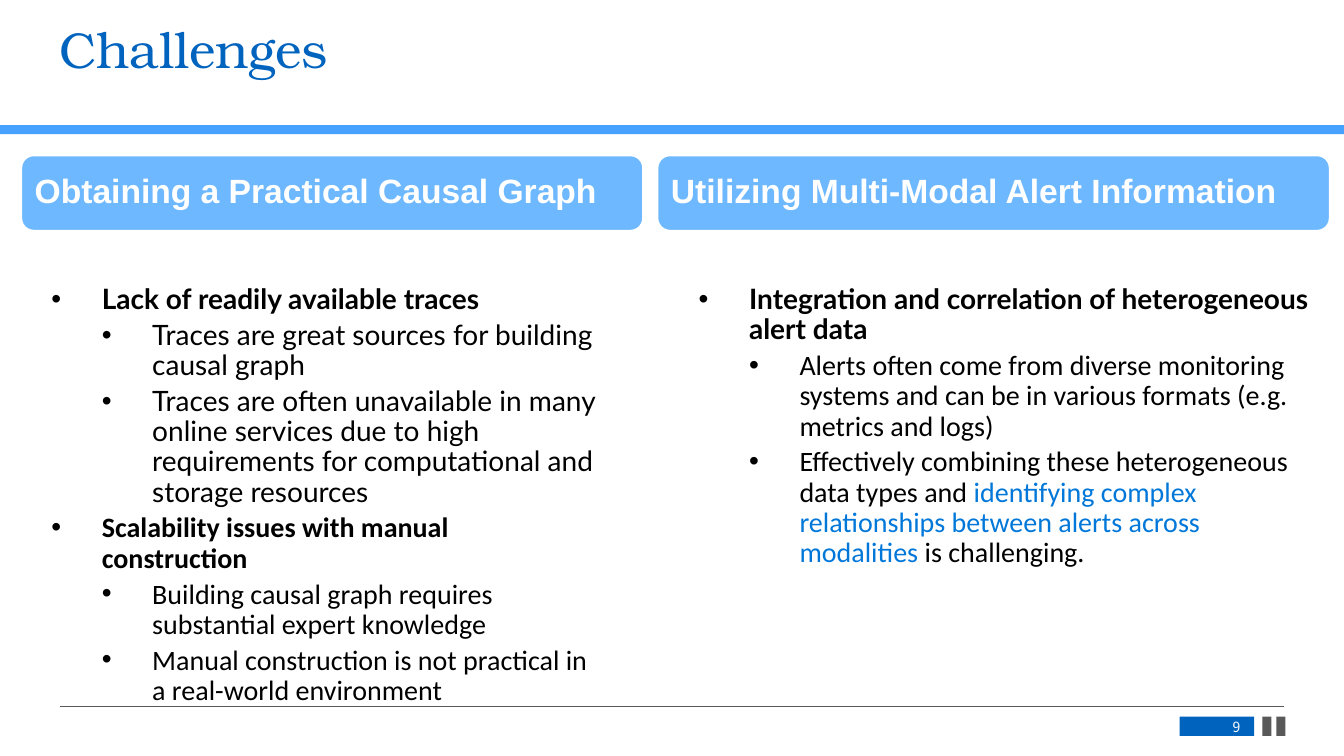
"""Build the Challenges slide: two headed columns of nested bullets."""
from dataclasses import dataclass

from lxml import etree
from pptx import Presentation
from pptx.dml.color import RGBColor
from pptx.enum.shapes import MSO_CONNECTOR, MSO_SHAPE
from pptx.enum.text import MSO_ANCHOR, PP_ALIGN
from pptx.oxml.ns import qn
from pptx.util import Emu, Pt

RECT = MSO_SHAPE.RECTANGLE
ROUNDED = MSO_SHAPE.ROUNDED_RECTANGLE
STRAIGHT = MSO_CONNECTOR.STRAIGHT
MIDDLE = MSO_ANCHOR.MIDDLE
TOP = MSO_ANCHOR.TOP
RIGHT = PP_ALIGN.RIGHT

EMU_PER_PX = 9144
INDENT = 50
COLORS = {
    "title": "0063BE",
    "band": "47A1FE",
    "header": "6EB8FF",
    "accent": "0178D9",
    "gray": "595959",
    "black": "000000",
    "white": "FFFFFF",
}


@dataclass(frozen=True)
class Box:
    left: int
    top: int
    width: int
    height: int


@dataclass(frozen=True)
class Bar:
    box: Box
    color: str


@dataclass(frozen=True)
class Bullet:
    level: int
    font: str
    text: str
    accent: str = ""
    tail: str = ""


@dataclass(frozen=True)
class Column:
    heading: str
    header: Box
    body: Box
    bullets: tuple[Bullet, ...]


BARS = (
    Bar(Box(0, 124, 1333, 9), "band"),
    Bar(Box(1170, 711, 74, 19), "title"),
    Bar(Box(1252, 711, 9, 19), "gray"),
    Bar(Box(1266, 711, 9, 19), "gray"),
)

COLUMNS = (
    Column(
        "Obtaining a Practical Causal Graph",
        Box(21, 154, 617, 75),
        Box(21, 280, 589, 391),
        (
            Bullet(1, "Lato", "Lack of readily available traces"),
            Bullet(2, "Lato", "Traces are great sources for building causal graph"),
            Bullet(2, "Lato", "Traces are often unavailable in many online services due to "
                              "high requirements for computational and storage resources"),
            Bullet(1, "Calibri", "Scalability issues with manual construction"),
            Bullet(2, "Calibri", "Building causal graph requires substantial expert knowledge"),
            Bullet(2, "Calibri", "Manual construction is not practical in a real-world "
                                 "environment"),
        ),
    ),
    Column(
        "Utilizing Multi-Modal Alert Information",
        Box(652, 154, 667, 75),
        Box(663, 280, 656, 391),
        (
            Bullet(1, "Lato", "Integration and correlation of heterogeneous alert data"),
            Bullet(2, "Calibri", "Alerts often come from diverse monitoring systems and can be "
                                 "in various formats (e.g. metrics and logs)"),
            Bullet(2, "Calibri", "Effectively combining these heterogeneous data types and ",
                   "identifying complex relationships between alerts across modalities",
                   " is challenging."),
        ),
    ),
)


def px(n: int) -> Emu:
    return Emu(n * EMU_PER_PX)


def rgb(name: str) -> RGBColor:
    return RGBColor.from_string(COLORS[name])


def place(box: Box) -> tuple[Emu, Emu, Emu, Emu]:
    return px(box.left), px(box.top), px(box.width), px(box.height)


def add_text(p, text: str, *, size: int, font: str, color: str = "black",
             bold: bool = False) -> None:
    r = p.add_run()
    r.text = text
    r.font.size = Pt(size)
    r.font.name = font
    r.font.bold = bold
    r.font.color.rgb = rgb(color)


def set_frame(tf, insets: tuple[int, int, int, int], anchor=TOP) -> None:
    tf.word_wrap = True
    tf.vertical_anchor = anchor
    tf.margin_left, tf.margin_top, tf.margin_right, tf.margin_bottom = map(px, insets)


def add_box(s, shape, box: Box, color: str):
    sp = s.shapes.add_shape(shape, *place(box))
    sp.shadow.inherit = False
    sp.fill.solid()
    sp.fill.fore_color.rgb = rgb(color)
    sp.line.fill.background()
    return sp


def add_rule(s, left: int, right: int, y: int) -> None:
    line = s.shapes.add_connector(STRAIGHT, px(left), px(y), px(right), px(y))
    line.line.color.rgb = rgb("gray")
    line.line.width = Pt(0.5)
    etree.SubElement(line._element.spPr, qn("a:effectLst"))


def add_bullet(p, bullet: Bullet) -> None:
    p.level = bullet.level
    pPr = p._p.get_or_add_pPr()
    pPr.set("marL", str(px(INDENT * bullet.level)))
    pPr.set("indent", str(px(-INDENT)))
    etree.SubElement(pPr, qn("a:buFont"), typeface="Arial")
    etree.SubElement(pPr, qn("a:buChar"), char="•")
    p.line_spacing = 0.9
    p.space_after = Pt(4)
    parts = ((bullet.text, "black"), (bullet.accent, "accent"), (bullet.tail, "black"))
    for text, color in parts:
        if text:
            add_text(p, text, size=20, font=bullet.font, color=color, bold=bullet.level == 1)


def add_column(s, column: Column) -> None:
    sp = add_box(s, ROUNDED, column.header, "header")
    sp.line.color.rgb = rgb("white")
    sp.line.width = Pt(1.5)
    set_frame(sp.text_frame, (10, 10, 10, 10), MIDDLE)
    p = sp.text_frame.paragraphs[0]
    p.alignment = PP_ALIGN.LEFT
    p.line_spacing = 0.9
    add_text(p, column.heading, size=24, font="Arial", color="white", bold=True)

    tf = s.shapes.add_textbox(*place(column.body)).text_frame
    set_frame(tf, (30, 3, 18, 3))
    for i, bullet in enumerate(column.bullets):
        add_bullet(tf.add_paragraph() if i else tf.paragraphs[0], bullet)


def main() -> None:
    prs = Presentation()
    prs.slide_width, prs.slide_height = px(1333), px(750)
    s = prs.slides.add_slide(prs.slide_layouts[6])

    for bar in BARS:
        add_box(s, RECT, bar.box, bar.color)
    add_rule(s, 60, 1273, 701)

    tf = s.shapes.add_textbox(*place(Box(49, 20, 1218, 64))).text_frame
    set_frame(tf, (10, 5, 10, 5))
    tf.paragraphs[0].line_spacing = 0.9
    add_text(tf.paragraphs[0], "Challenges", size=36, font="TeX Gyre Bonum", color="title")

    tf = s.shapes.add_textbox(*place(Box(1174, 713, 66, 17))).text_frame
    set_frame(tf, (10, 0, 10, 0), MIDDLE)
    tf.paragraphs[0].alignment = RIGHT
    add_text(tf.paragraphs[0], "9", size=10, font="Noto Sans CJK SC", color="white")

    for column in COLUMNS:
        add_column(s, column)
    prs.save("out.pptx")


if __name__ == "__main__":
    main()
